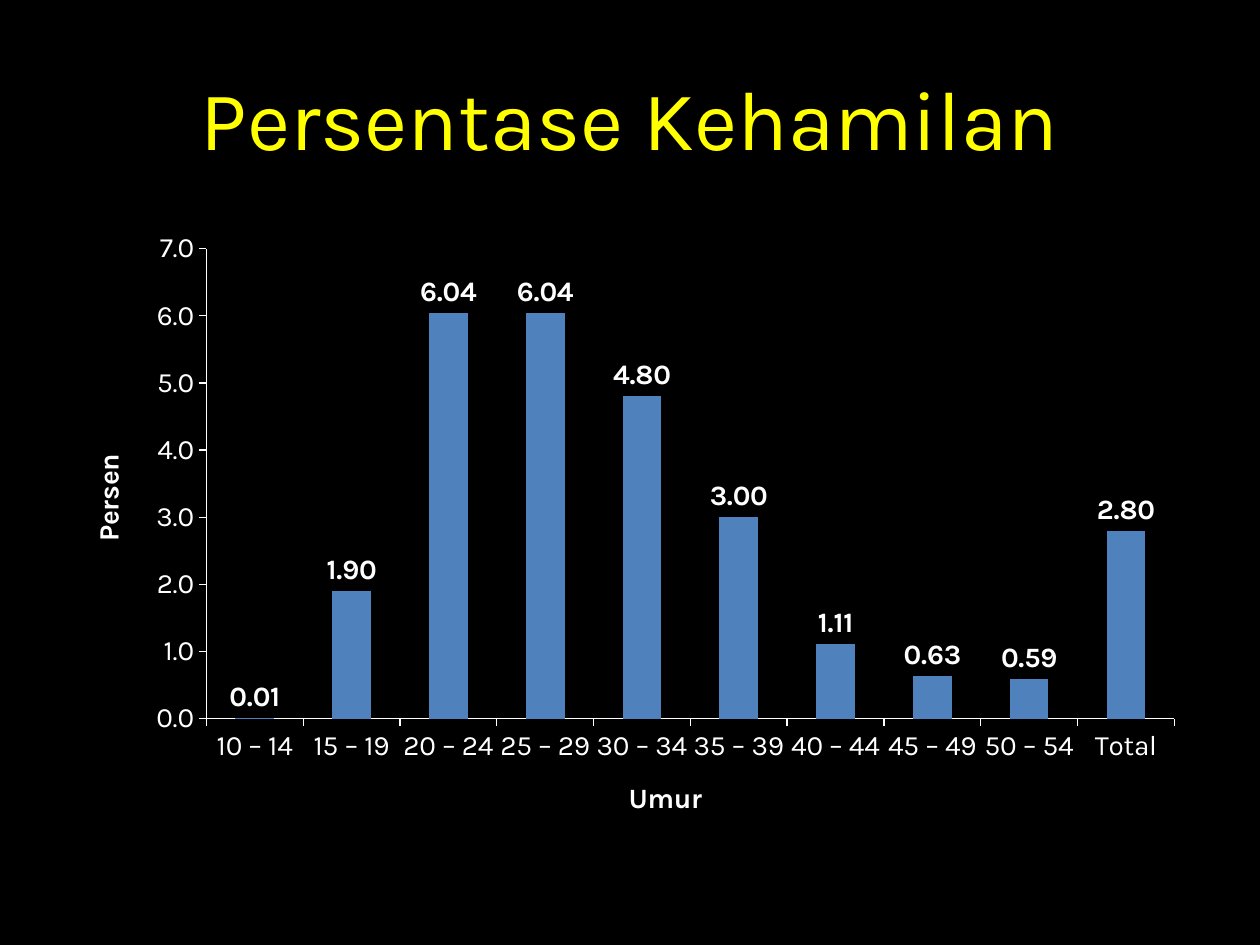
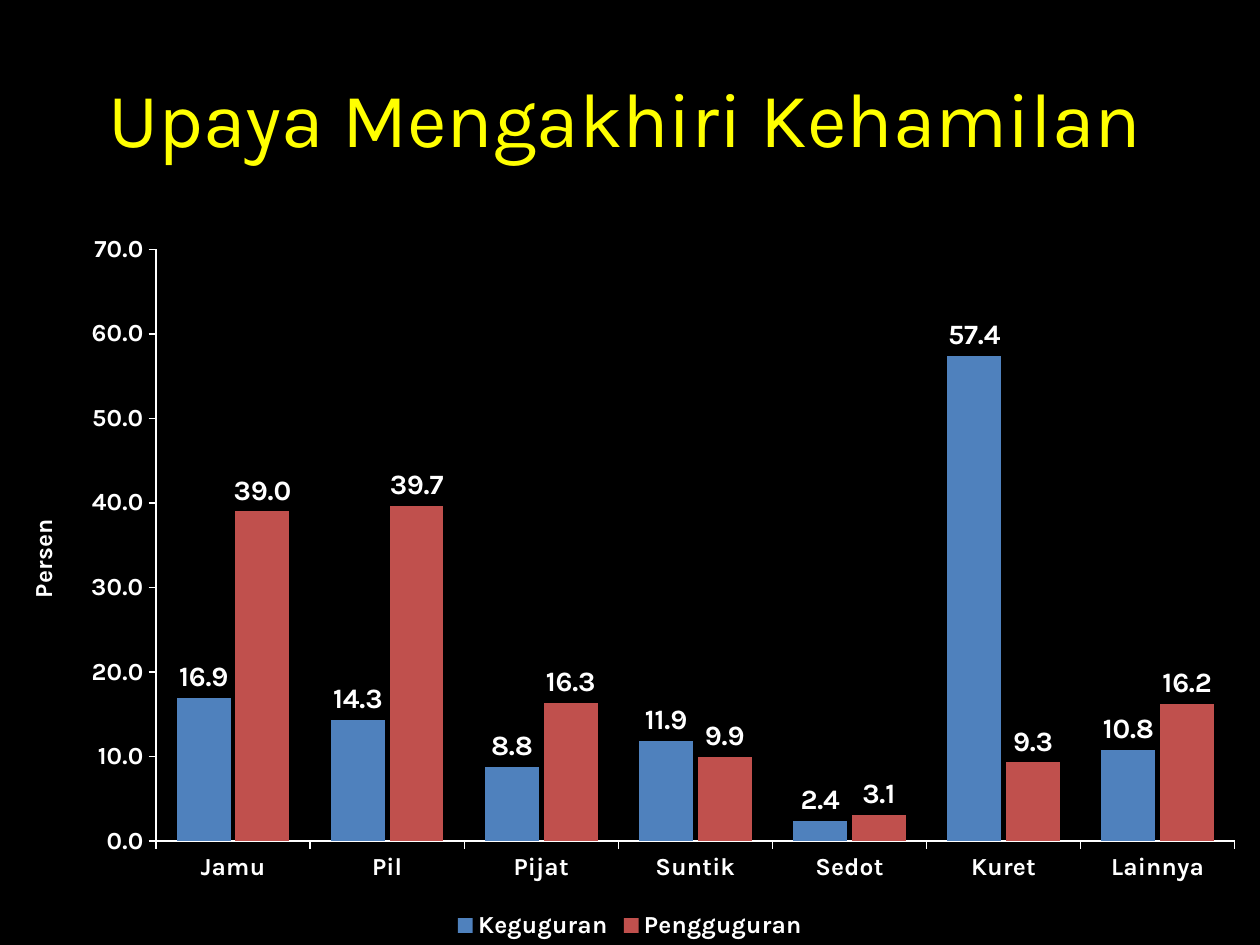
from pptx import Presentation, util as u
from pptx.chart.data import CategoryChartData
from pptx.dml.color import RGBColor
from pptx.enum import chart as ch, text

FONT = "Karla"
COLOURS = {"background": "000000", "title": "FFFF00", "text": "FFFFFF",
           "blue": "4F81BD", "red": "C0504D"}

deck = Presentation()
deck.slide_width, deck.slide_height = u.Inches(10), u.Inches(7.5)
WIDTH, HEIGHT = deck.slide_width, deck.slide_height
TITLE_TOP, TITLE_HEIGHT = 0.04 * HEIGHT, HEIGHT / 6
CHART_TOP = u.Inches(1.75)


def rgb(name):
    return RGBColor.from_string(COLOURS[name])


def write(frame, words, size, colour="text", bold=False):
    """Put one centred line of formatted text in a frame."""
    line = frame.paragraphs[0]
    line.alignment = text.PP_ALIGN.CENTER
    run = line.add_run()
    run.text = words
    run.font.name, run.font.size, run.font.bold = FONT, u.Pt(size), bold
    run.font.color.rgb = rgb(colour)


ages = [f"{start} – {start + 4}" for start in range(10, 55, 5)]

# Left edges, widths and chart height are shares of the slide.
topics = [
    dict(title="Persentase Kehamilan", title_size=48, title_left=0.05, title_width=0.9,
         left=0.05, width=0.9, height=0.66, size=16, bold=False,
         categories=ages + ["Total"], category_title="Umur",
         series=[("Series 1", "blue",
                  [0.01, 1.9, 6.04, 6.04, 4.8, 3, 1.11, 0.63, 0.59, 2.8])],
         label_format="0.00", gap=150, overlap=0),
    dict(title="Upaya Mengakhiri Kehamilan", title_size=44, title_left=0.02, title_width=0.953,
         left=0, width=1, height=1 - CHART_TOP / HEIGHT, size=14, bold=True,
         categories=["Jamu", "Pil", "Pijat", "Suntik", "Sedot", "Kuret", "Lainnya"],
         category_title=None,
         series=[("Keguguran", "blue", [16.9, 14.3, 8.8, 11.9, 2.4, 57.4, 10.8]),
                 ("Pengguguran", "red", [39, 39.7, 16.3, 9.9, 3.1, 9.3, 16.2])],
         label_format="0.0", gap=77, overlap=-9),
]

for topic in topics:
    slide = deck.slides.add_slide(deck.slide_layouts[6])
    slide.background.fill.solid()
    slide.background.fill.fore_color.rgb = rgb("background")

    heading = slide.shapes.add_textbox(
        int(topic["title_left"] * WIDTH), int(TITLE_TOP),
        int(topic["title_width"] * WIDTH), int(TITLE_HEIGHT)).text_frame
    heading.word_wrap = True
    heading.vertical_anchor = text.MSO_ANCHOR.MIDDLE
    write(heading, topic["title"], topic["title_size"], colour="title")

    data = CategoryChartData()
    data.categories = topic["categories"]
    for name, _, values in topic["series"]:
        data.add_series(name, values)
    chart = slide.shapes.add_chart(
        ch.XL_CHART_TYPE.COLUMN_CLUSTERED, int(topic["left"] * WIDTH), CHART_TOP,
        int(topic["width"] * WIDTH), int(topic["height"] * HEIGHT), data).chart
    chart.has_title = False
    chart.font.name, chart.font.size = FONT, u.Pt(topic["size"])
    chart.font.bold = topic["bold"]
    chart.font.color.rgb = rgb("text")

    chart.has_legend = len(topic["series"]) > 1
    if chart.has_legend:
        chart.legend.position = ch.XL_LEGEND_POSITION.BOTTOM
        chart.legend.include_in_layout = False

    axis_titles = [(chart.category_axis, topic["category_title"]),
                   (chart.value_axis, "Persen")]
    for axis, axis_title in axis_titles:
        axis.has_major_gridlines = False
        axis.major_tick_mark = ch.XL_TICK_MARK.OUTSIDE
        axis.minor_tick_mark = ch.XL_TICK_MARK.NONE
        axis.format.line.color.rgb = rgb("text")
        axis.format.line.width = u.Pt(0.75)
        if axis_title:
            write(axis.axis_title.text_frame, axis_title, topic["size"], bold=True)
    value_ticks = chart.value_axis.tick_labels
    value_ticks.number_format, value_ticks.number_format_is_linked = "0.0", False

    columns = chart.plots[0]
    columns.gap_width, columns.overlap = topic["gap"], topic["overlap"]
    columns.vary_by_categories = False
    for series, (_, colour, _) in zip(columns.series, topic["series"]):
        series.invert_if_negative = False
        series.format.fill.solid()
        series.format.fill.fore_color.rgb = rgb(colour)
        labels = series.data_labels
        labels.show_value = True
        labels.position = ch.XL_LABEL_POSITION.OUTSIDE_END
        labels.number_format, labels.number_format_is_linked = topic["label_format"], False
        labels.font.name, labels.font.size, labels.font.bold = FONT, u.Pt(16), True
        labels.font.color.rgb = rgb("text")

deck.save("out.pptx")
